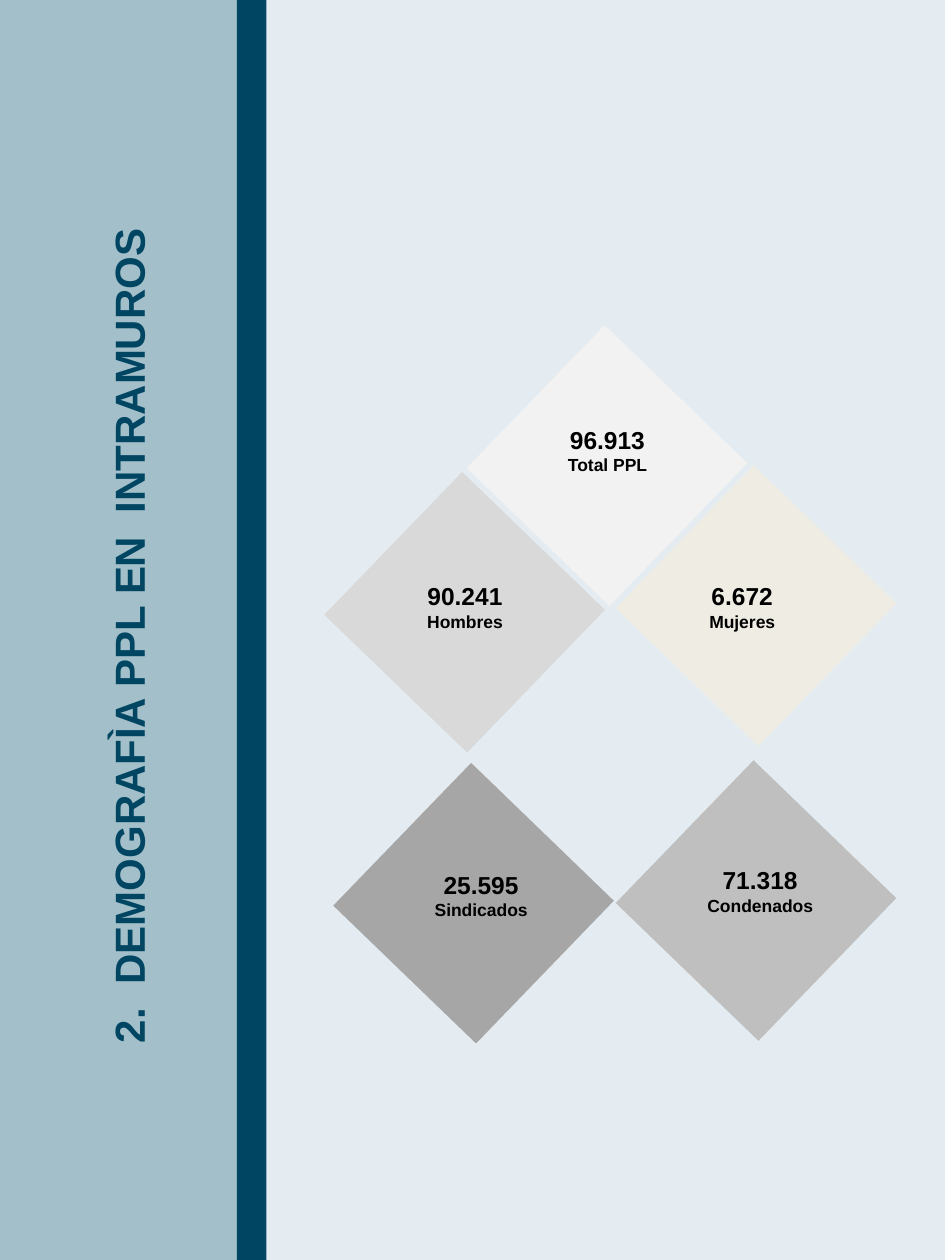
"""Build the slide on the prison population held inside prison walls."""
from typing import NamedTuple

from pptx import Presentation
from pptx.dml.color import RGBColor
from pptx.enum.shapes import MSO_SHAPE as Preset
from pptx.enum.text import MSO_ANCHOR as Anchor, MSO_AUTO_SIZE as AutoSize, PP_ALIGN as Align
from pptx.shapes.autoshape import Shape
from pptx.slide import Slide
from pptx.util import Pt

WIDTH, HEIGHT = 540, 720
NAVY = "004663"
DIAMOND_SIDE, DIAMOND_TURN = 113.4, 44
LABEL_SIZE = (99.4, 42.5)
TITLE_LENGTH, TITLE_DEPTH, TITLE_CENTER = 590.4, 44, 73.2


class Band(NamedTuple):
    left: float
    width: float
    fill: str


class Figure(NamedTuple):
    value: str
    name: str
    fill: str
    diamond: tuple[float, float]
    label: tuple[float, float]


BANDS = [Band(0, 135.4, "A3BFC9"), Band(135.4, 16.9, NAVY)]
FIGURES = [
    Figure("96.913", "Total PPL", "F2F2F2", (290.2, 209.3), (297.4, 239.2)),
    Figure("6.672", "Mujeres", "EFEDE3", (375.3, 289.4), (374.4, 328.5)),
    Figure("90.241", "Hombres", "D9D9D9", (208.8, 293.2), (216, 328.5)),
    Figure("71.318", "Condenados", "BFBFBF", (375.3, 457.9), (384.7, 491)),
    Figure("25.595", "Sindicados", "A6A6A6", (213.9, 459.4), (225.2, 493.4)),
]


def color(code: str) -> RGBColor:
    """Turn a hex string into a colour."""
    return RGBColor.from_string(code)


def write(para, text: str, *, size: float, ink: str = "000000", bold: bool = True) -> None:
    """Add centred, formatted text to a paragraph."""
    para.alignment = Align.CENTER
    span = para.add_run()
    span.text = text
    span.font.name = "Arial"
    span.font.size = Pt(size)
    span.font.bold = bold
    span.font.color.rgb = color(ink)


def add_block(page: Slide, left: float, top: float, width: float, height: float,
              fill: str, turn: float = 0) -> Shape:
    """Draw a flat rectangle without an outline."""
    block = page.shapes.add_shape(Preset.RECTANGLE, Pt(left), Pt(top), Pt(width), Pt(height))
    block.shadow.inherit = False
    block.fill.solid()
    block.fill.fore_color.rgb = color(fill)
    block.line.fill.background()
    block.rotation = turn
    return block


def set_title(page: Slide, text: str) -> None:
    """Place the title so that it reads upwards."""
    title = page.shapes.title
    title.left, title.top = Pt(TITLE_CENTER - TITLE_LENGTH / 2), Pt((HEIGHT - TITLE_DEPTH) / 2)
    title.width, title.height = Pt(TITLE_LENGTH), Pt(TITLE_DEPTH)
    title.rotation = 270
    frame = title.text_frame
    frame.word_wrap = True
    frame.auto_size = AutoSize.NONE
    frame.vertical_anchor = Anchor.MIDDLE
    write(frame.paragraphs[0], text, size=24, ink=NAVY)


def add_figure(page: Slide, figure: Figure) -> None:
    """Draw a diamond with its value and name."""
    add_block(page, *figure.diamond, DIAMOND_SIDE, DIAMOND_SIDE, figure.fill, DIAMOND_TURN)
    box = page.shapes.add_textbox(*map(Pt, figure.label + LABEL_SIZE))
    frame = box.text_frame
    frame.word_wrap = True
    write(frame.paragraphs[0], figure.value, size=14)
    write(frame.add_paragraph(), figure.name, size=10)


def main() -> None:
    """Build and save the deck."""
    deck = Presentation()
    deck.slide_width, deck.slide_height = Pt(WIDTH), Pt(HEIGHT)
    page = deck.slides.add_slide(deck.slide_layouts.get_by_name("Title Only"))
    page.background.fill.solid()
    page.background.fill.fore_color.rgb = color("E4ECF1")
    for band in BANDS:
        block = add_block(page, band.left, 0, band.width, HEIGHT, band.fill)
        page.shapes.title.element.addprevious(block.element)
    set_title(page, "2.  DEMOGRAFÌA PPL EN  INTRAMUROS ")
    for figure in FIGURES:
        add_figure(page, figure)
    deck.save("out.pptx")


if __name__ == "__main__":
    main()
